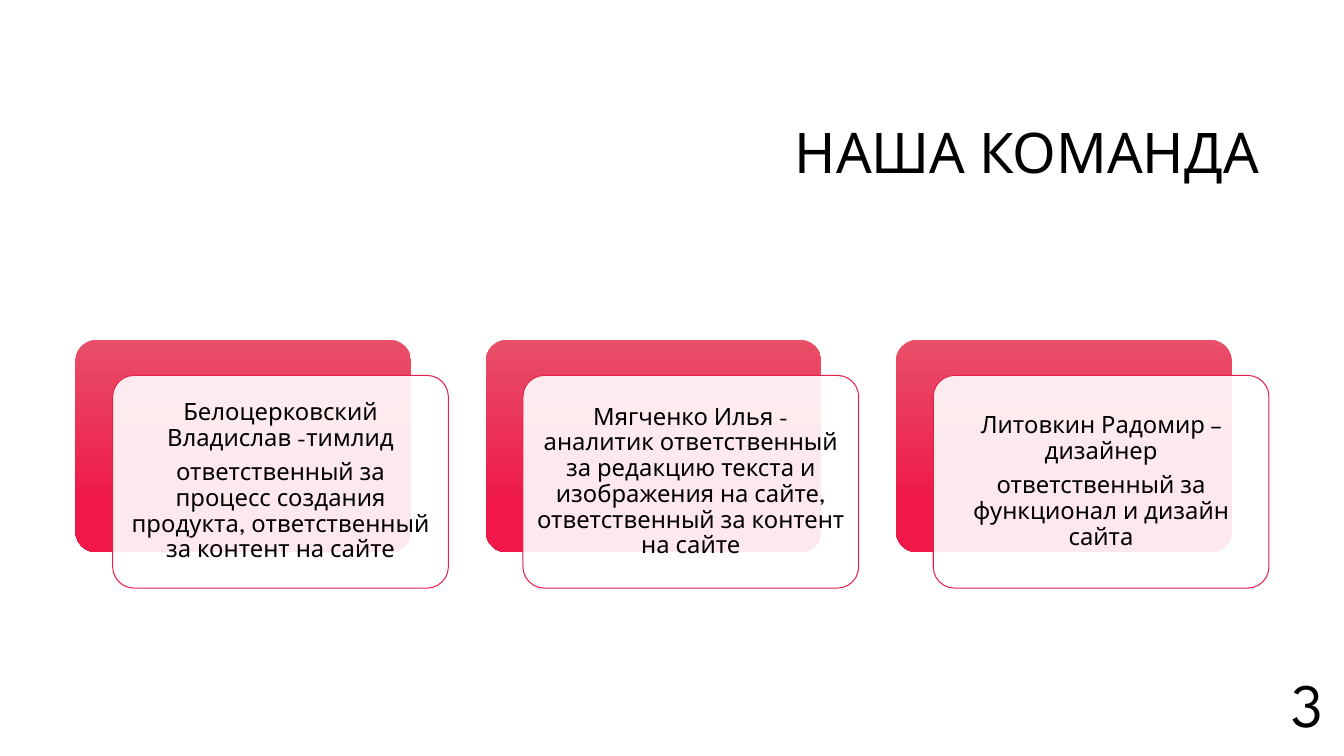
"""Build the team slide: a title, three role cards and a page number."""
from lxml import etree
from pptx import Presentation
from pptx.dml.color import RGBColor
from pptx.enum.shapes import MSO_SHAPE as Shape
from pptx.enum.text import MSO_ANCHOR as Anchor, MSO_AUTO_SIZE as AutoSize, PP_ALIGN as Align
from pptx.oxml.ns import qn
from pptx.util import Cm, Pt

BLACK = RGBColor(0x00, 0x00, 0x00)
WHITE = RGBColor(0xFF, 0xFF, 0xFF)
ROSE = RGBColor(0xE8, 0x4F, 0x68)
CRIMSON = RGBColor(0xEF, 0x18, 0x49)
OUTLINE = RGBColor(0xE5, 0x22, 0x4E)

CARD_LEFT, CARD_TOP, CARD_STEP = 1.9, 8.56, 10.34
CARD_WIDTH, CARD_HEIGHT = 8.46, 5.36
PANEL_SHIFT_X, PANEL_SHIFT_Y = 0.94, 0.9

TEAM = [
    ["Белоцерковский Владислав -тимлид",
     "ответственный за процесс создания продукта, ответственный за контент на сайте"],
    ["Мягченко Илья - аналитик ответственный за редакцию текста и изображения на сайте, "
     "ответственный за контент на сайте"],
    ["Литовкин Радомир – дизайнер", "ответственный за функционал и дизайн сайта"],
]


def apply(target, values):
    for name, value in values.items():
        setattr(target, name, value)


class TeamSlide:
    font = {"name": "League Spartan", "bold": False}

    def __init__(self, presentation):
        self.slide = presentation.slides.add_slide(presentation.slide_layouts[5])

    def set_text(self, shape, lines, size, frame_format, paragraph_format):
        frame = shape.text_frame
        frame.text = "\n".join(lines)
        apply(frame, {"word_wrap": True, "auto_size": AutoSize.NONE, **frame_format})
        for paragraph in frame.paragraphs:
            apply(paragraph, paragraph_format)
            for run in paragraph.runs:
                apply(run.font, {**self.font, "size": Pt(size)})
                run.font.color.rgb = BLACK

    def title(self, text, left, top, width, height):
        shape = self.slide.shapes.title
        apply(shape, {"left": Cm(left), "top": Cm(top), "width": Cm(width), "height": Cm(height)})
        self.set_text(shape, [text], 40, {"vertical_anchor": Anchor.MIDDLE},
                      {"alignment": Align.RIGHT, "line_spacing": 0.9})

    def rounded(self, left, top):
        shape = self.slide.shapes.add_shape(
            Shape.ROUNDED_RECTANGLE, Cm(left), Cm(top), Cm(CARD_WIDTH), Cm(CARD_HEIGHT))
        shape.adjustments[0] = 0.1
        shape.shadow.inherit = False
        return shape

    def backdrop(self, left, top):
        shape = self.rounded(left, top)
        shape.line.fill.background()
        shape.fill.gradient()
        shape.fill.gradient_angle = 270
        for stop, position, color in zip(shape.fill.gradient_stops, (0, 0.78), (ROSE, CRIMSON)):
            stop.position = position
            stop.color.rgb = color

    def panel(self, left, top, lines):
        shape = self.rounded(left, top)
        shape.fill.solid()
        shape.fill.fore_color.rgb = WHITE
        color = shape.element.spPr.find(qn("a:solidFill"))[0]
        etree.SubElement(color, qn("a:alpha")).set("val", "90000")
        shape.line.color.rgb = OUTLINE
        shape.line.width = Pt(0.75)
        margins = {f"margin_{side}": Cm(0.18) for side in ("left", "top", "right", "bottom")}
        self.set_text(shape, lines, 17, {"vertical_anchor": Anchor.MIDDLE, **margins},
                      {"alignment": Align.CENTER, "line_spacing": 0.9, "space_after": Pt(6)})

    def card(self, left, top, lines):
        self.backdrop(left, top)
        self.panel(left + PANEL_SHIFT_X, top + PANEL_SHIFT_Y, lines)

    def page_number(self, number, left, top, width, height):
        box = self.slide.shapes.add_textbox(Cm(left), Cm(top), Cm(width), Cm(height))
        self.set_text(box, [number], 44, {"word_wrap": False}, {"alignment": Align.LEFT})


def main():
    presentation = Presentation()
    apply(presentation, {"slide_width": Cm(33.87), "slide_height": Cm(19.05)})
    team_slide = TeamSlide(presentation)
    team_slide.title("НАША КОМАНДА", 8.05, 2.13, 23.93, 3.58)
    for index, lines in enumerate(TEAM):
        team_slide.card(CARD_LEFT + index * CARD_STEP, CARD_TOP, lines)
    team_slide.page_number("3", 32.31, 16.66, 1.55, 2.13)
    presentation.save("out.pptx")


if __name__ == "__main__":
    main()
